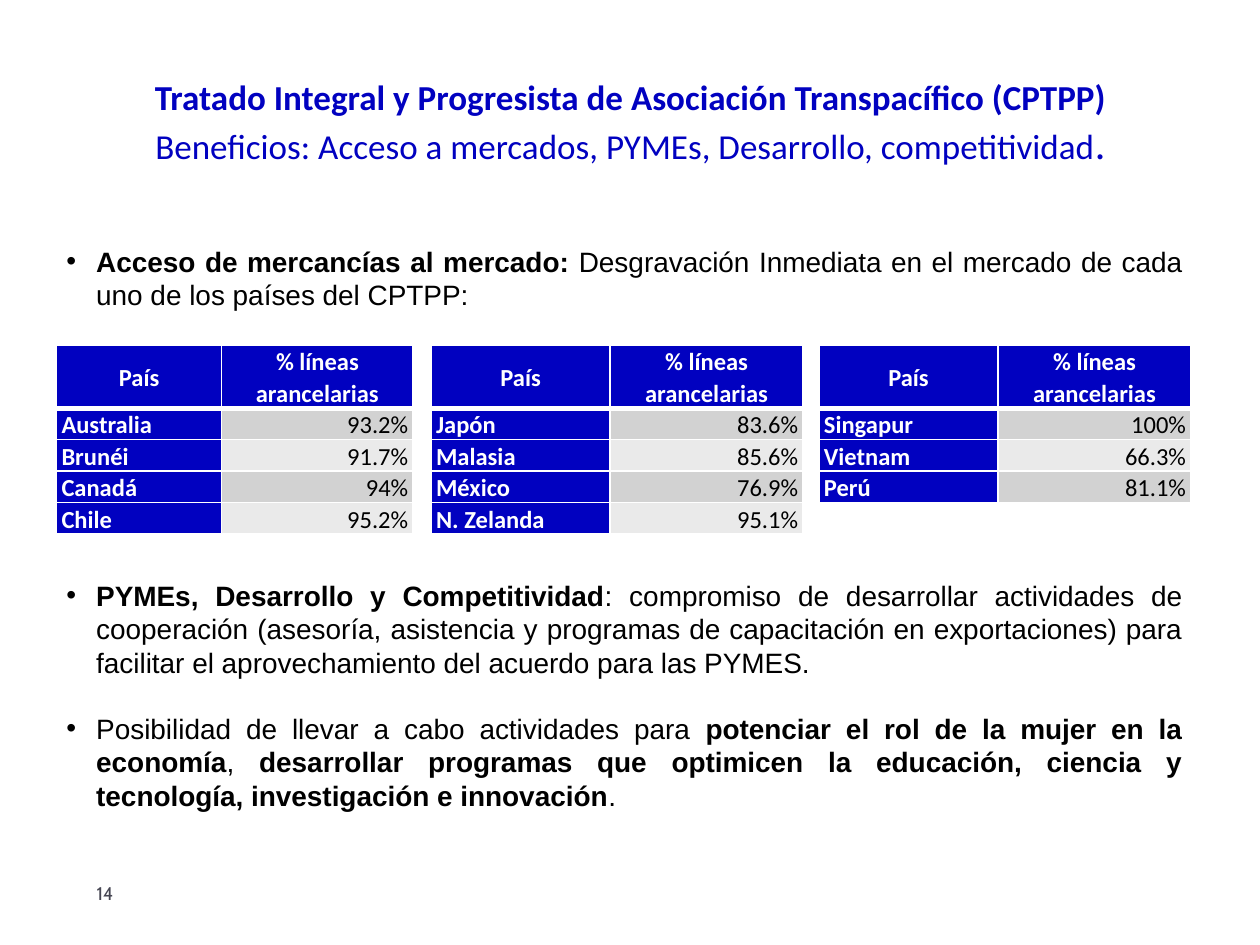
from lxml import etree
from pptx import Presentation
from pptx.dml.color import RGBColor
from pptx.enum.text import MSO_ANCHOR, MSO_AUTO_SIZE, PP_ALIGN
from pptx.oxml.ns import qn
from pptx.util import Cm, Pt

BLUE = RGBColor(0x01, 0x01, 0xC0)
WHITE = RGBColor(0xFF, 0xFF, 0xFF)
BLACK = RGBColor(0, 0, 0)
SLATE = RGBColor(0x46, 0x46, 0x53)
BANDS = (RGBColor(0xD2, 0xD2, 0xD2), RGBColor(0xEA, 0xEA, 0xEA))

LEFT, CENTER, RIGHT = PP_ALIGN.LEFT, PP_ALIGN.CENTER, PP_ALIGN.RIGHT
JUSTIFY = PP_ALIGN.JUSTIFY
TOP, MIDDLE, BOTTOM = MSO_ANCHOR.TOP, MSO_ANCHOR.MIDDLE, MSO_ANCHOR.BOTTOM
NO_FIT = MSO_AUTO_SIZE.NONE

HEADER = ("País", "% líneas arancelarias")
TABLE_TOP = 6.96
# left edge, column widths (cm), rows
TABLES = [
    (1.14, (3.33, 3.86), [("Australia", "93.2%"), ("Brunéi", "91.7%"),
                          ("Canadá", "94%"), ("Chile", "95.2%")]),
    (8.69, (3.61, 3.89), [("Japón", "83.6%"), ("Malasia", "85.6%"),
                          ("México", "76.9%"), ("N. Zelanda", "95.1%")]),
    (16.51, (3.61, 3.89), [("Singapur", "100%"), ("Vietnam", "66.3%"),
                           ("Perú", "81.1%")]),
]

# Each bullet is a list of (text, bold) runs
ACCESS = [[
    ("Acceso de mercancías al mercado: ", True),
    ("Desgravación Inmediata en el mercado de cada uno de los países del CPTPP:", False),
]]
BENEFITS = [
    [("PYMEs, Desarrollo y Competitividad", True),
     (": compromiso de desarrollar actividades de cooperación (asesoría, "
      "asistencia y programas de capacitación en exportaciones) para facilitar "
      "el aprovechamiento del acuerdo para las PYMES.", False)],
    [("Posibilidad de llevar a cabo actividades para ", False),
     ("potenciar el rol de la mujer en la economía", True),
     (", ", False),
     ("desarrollar programas que optimicen la educación, ciencia y tecnología, "
      "investigación e innovación", True),
     (".", False)],
]


def set_font(font, name, size, color, bold=False):
    font.name, font.size, font.bold = name, Pt(size), bold
    font.color.rgb = color


def place(sp, box):
    sp.left, sp.top, sp.width, sp.height = (Cm(v) for v in box)


def add_title(slide, box):
    title = slide.shapes.title
    place(title, box)
    tf = title.text_frame
    tf.auto_size, tf.vertical_anchor = NO_FIT, TOP
    lines = [
        [("Tratado Integral y Progresista de Asociación Transpacífico (CPTPP)", 20, True)],
        [("Beneficios: Acceso a mercados, PYMEs, Desarrollo, competitividad", 20, False),
         (".", 24, False)],
    ]
    for i, line in enumerate(lines):
        p = tf.add_paragraph() if i else tf.paragraphs[0]
        p.alignment = CENTER
        for text, size, bold in line:
            r = p.add_run()
            r.text = text
            set_font(r.font, "Calibri", size, BLUE, bold)


def add_bullets(slide, box, bullets, anchor=TOP):
    tf = slide.shapes.add_textbox(*(Cm(v) for v in box)).text_frame
    tf.word_wrap, tf.vertical_anchor = True, anchor
    for i, runs in enumerate(bullets):
        p = tf.add_paragraph() if i else tf.paragraphs[0]
        p.alignment = JUSTIFY
        pPr = p._p.get_or_add_pPr()
        pPr.set("marL", str(Cm(0.6)))
        pPr.set("indent", str(-Cm(0.6)))
        etree.SubElement(pPr, qn("a:buFont"), typeface="Arial")
        etree.SubElement(pPr, qn("a:buChar"), char="•")
        if i:
            p.space_before = Pt(18.4)
        for text, bold in runs:
            r = p.add_run()
            r.text = text
            set_font(r.font, "Arial", 16, BLACK, bold)


def set_borders(cell, bottom):
    tcPr = cell._tc.get_or_add_tcPr()
    for side, width in (("L", 1), ("R", 1), ("T", 1), ("B", bottom)):
        ln = etree.SubElement(tcPr, qn(f"a:ln{side}"), w=str(Pt(width)))
        fill = etree.SubElement(ln, qn("a:solidFill"))
        etree.SubElement(fill, qn("a:srgbClr"), val=str(WHITE))


def add_tariff_table(slide, left, top, widths, rows):
    header_h, row_h = 1.09, 0.53
    table = slide.shapes.add_table(
        len(rows) + 1, 2, Cm(left), Cm(top), Cm(sum(widths)),
        Cm(header_h + row_h * len(rows))).table
    table.first_col = True
    for col, width in zip(table.columns, widths):
        col.width = Cm(width)
    for i, values in enumerate([HEADER] + rows):
        is_header = i == 0
        table.rows[i].height = Cm(header_h if is_header else row_h)
        for j, text in enumerate(values):
            is_label = is_header or j == 0
            cell = table.cell(i, j)
            set_borders(cell, 3 if is_header else 1)
            cell.fill.solid()
            cell.fill.fore_color.rgb = BLUE if is_label else BANDS[(i - 1) % 2]
            cell.margin_left = cell.margin_right = Cm(0.1)
            cell.margin_top = cell.margin_bottom = 0
            cell.vertical_anchor = MIDDLE if is_header else BOTTOM
            p = cell.text_frame.paragraphs[0]
            p.alignment = CENTER if is_header else (LEFT, RIGHT)[j]
            p.line_spacing = 1.07
            r = p.add_run()
            r.text = text
            set_font(r.font, "Calibri", 14, WHITE if is_label else BLACK, is_label)


def add_page_number(slide, box):
    tf = slide.shapes.add_textbox(*(Cm(v) for v in box)).text_frame
    tf.word_wrap = True
    r = tf.paragraphs[0].add_run()
    r.text = "14"
    set_font(r.font, "Cabin", 10.5, SLATE)


def main():
    prs = Presentation()
    prs.slide_width, prs.slide_height = Cm(25.4), Cm(19.05)
    slide = prs.slides.add_slide(prs.slide_layouts[5])

    # Heading and first point
    add_title(slide, (0.71, 1.4, 24, 2.13))
    add_bullets(slide, (1.09, 4.83, 23, 1.55), ACCESS, MIDDLE)

    # Share of tariff lines by country
    for left, widths, rows in TABLES:
        add_tariff_table(slide, left, TABLE_TOP, widths, rows)

    # Remaining points and page number
    add_bullets(slide, (1.09, 11.53, 23, 5.05), BENEFITS)
    add_page_number(slide, (1.7, 17.65, 5.5, 1))
    prs.save("out.pptx")


if __name__ == "__main__":
    main()
